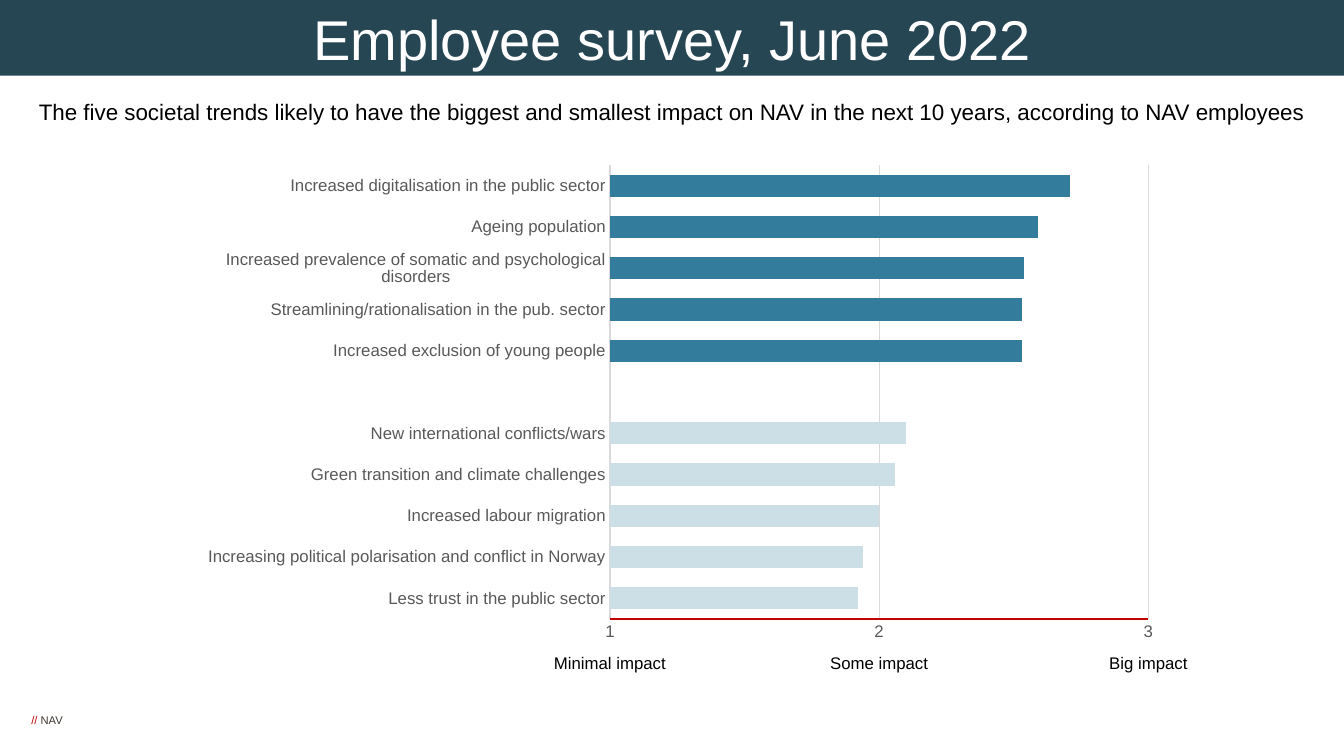
from pptx import Presentation
from pptx.chart.data import CategoryChartData
from pptx.dml.color import RGBColor
from pptx.enum.chart import XL_CHART_TYPE, XL_TICK_MARK
from pptx.enum.shapes import MSO_SHAPE
from pptx.enum.text import MSO_ANCHOR, PP_ALIGN
from pptx.oxml import parse_xml
from pptx.oxml.ns import nsdecls, qn
from pptx.util import Inches, Pt

COLORS = {
    "band": "254652", "white": "FFFFFF", "black": "000000",
    "big": "337C9B", "small": "CCDEE6", "label": "595959",
    "grid": "D9D9D9", "accent": "C30000", "footer": "3E3832",
}
FONT = "Arial"

# Trends from the bottom of the chart to the top
SMALLEST = [
    ("Less trust in the public sector", 1.92),
    ("Increasing political polarisation and conflict in Norway", 1.94),
    ("Increased labour migration", 2),
    ("Green transition and climate challenges", 2.06),
    ("New international conflicts/wars", 2.1),
]
BIGGEST = [
    ("Increased exclusion of young people", 2.53),
    ("Streamlining/rationalisation in the pub. sector", 2.53),
    ("Increased prevalence of somatic and psychological disorders", 2.54),
    ("Ageing population", 2.59),
    ("Increased digitalisation in the public sector", 2.71),
]
IMPACTS = ["Minimal impact", "Some impact", "Big impact"]
# Plot area as shares of the chart: left, top, width, height
PLOT = (0.441, 0.024, 0.534, 0.837)


def color(name):
    return RGBColor.from_string(COLORS[name])


def set_font(font, size, name):
    font.name, font.size = FONT, Pt(size)
    font.color.rgb = color(name)


def box_inches(box):
    return [Inches(length) for length in box]


def add_band(slide, box):
    band = slide.shapes.add_shape(MSO_SHAPE.RECTANGLE, *box_inches(box))
    band.shadow.inherit = False
    band.fill.solid()
    band.fill.fore_color.rgb = color("band")
    band.line.fill.background()
    band.text_frame.vertical_anchor = MSO_ANCHOR.MIDDLE
    heading = band.text_frame.paragraphs[0]
    heading.text = "Employee survey, June 2022"
    heading.alignment = PP_ALIGN.CENTER
    set_font(heading.font, 40, "white")


def fill_title(slide, box):
    title = slide.shapes.title
    title.left, title.top, title.width, title.height = box_inches(box)
    title.text_frame.vertical_anchor = MSO_ANCHOR.MIDDLE
    question = title.text_frame.paragraphs[0]
    question.text = ("The five societal trends likely to have the biggest and smallest "
                     "impact on NAV in the next 10 years, according to NAV employees")
    question.alignment = PP_ALIGN.CENTER
    question.line_spacing = 0.9
    set_font(question.font, 16, "black")


def format_axis(axis, line):
    axis.major_tick_mark = axis.minor_tick_mark = XL_TICK_MARK.NONE
    axis.format.line.color.rgb = color(line)
    axis.format.line.width = Pt(0.75)
    set_font(axis.tick_labels.font, 12, "label")


def place_plot(chart):
    plot_area = chart.plots[0]._element.getparent()
    for layout in plot_area.findall(qn("c:layout")):
        plot_area.remove(layout)
    sides = "".join(f'<c:{side} val="{share}"/>' for side, share in zip("xywh", PLOT))
    plot_area.insert(0, parse_xml(
        f'<c:layout {nsdecls("c")}><c:manualLayout><c:layoutTarget val="inner"/>'
        f'<c:xMode val="edge"/><c:yMode val="edge"/>{sides}</c:manualLayout></c:layout>'))


def add_impact_chart(slide, box):
    trends = SMALLEST + [("", None)] + BIGGEST
    survey = CategoryChartData()
    survey.categories = [trend for trend, _ in trends]
    survey.add_series("Series 1", [score for _, score in trends])
    chart = slide.shapes.add_chart(
        XL_CHART_TYPE.BAR_STACKED, *box_inches(box), survey).chart
    chart.has_legend = chart.has_title = False
    set_font(chart.font, 12, "black")
    place_plot(chart)

    # Bars
    bars = chart.plots[0]
    bars.gap_width, bars.overlap = 86, 100
    bars.vary_by_categories = False
    scores = bars.series[0]
    scores.format.fill.solid()
    scores.format.fill.fore_color.rgb = color("big")
    for index in range(len(SMALLEST)):
        fill = scores.points[index].format.fill
        fill.solid()
        fill.fore_color.rgb = color("small")

    # Axes
    format_axis(chart.category_axis, "grid")
    impact_axis = chart.value_axis
    format_axis(impact_axis, "accent")
    impact_axis.minimum_scale, impact_axis.maximum_scale = 1, 3
    impact_axis.major_unit = 1
    impact_axis.tick_labels.number_format = "0"
    impact_axis.tick_labels.number_format_is_linked = False
    impact_axis.has_major_gridlines = True
    gridline = impact_axis.major_gridlines.format.line
    gridline.color.rgb = color("grid")
    gridline.width = Pt(0.75)


def add_impact_labels(slide, chart_box, top):
    left, _, width, _ = chart_box
    label_width = 1.9
    for step, impact in enumerate(IMPACTS):
        center = left + width * (PLOT[0] + PLOT[2] * step / (len(IMPACTS) - 1))
        label = slide.shapes.add_textbox(
            *box_inches((center - label_width / 2, top, label_width, 0.3)))
        label.text_frame.word_wrap = True
        caption = label.text_frame.paragraphs[0]
        caption.text = impact
        caption.alignment = PP_ALIGN.CENTER
        set_font(caption.font, 12, "black")


def add_footer(slide, box):
    frame = slide.shapes.add_textbox(*box_inches(box)).text_frame
    frame.margin_left = Inches(0.04)
    frame.margin_top = frame.margin_right = frame.margin_bottom = 0
    for text, name in (("// ", "accent"), ("NAV", "footer")):
        run = frame.paragraphs[0].add_run()
        run.text = text
        set_font(run.font, 8, name)


def main():
    prs = Presentation()
    prs.slide_width, prs.slide_height = Inches(13.33), Inches(7.5)
    slide = prs.slides.add_slide(prs.slide_layouts[5])
    chart_box = (1.64, 1.51, 10, 5.38)
    add_footer(slide, (0.27, 7.08, 0.39, 0.13))
    fill_title(slide, (0, 0.75, 13.33, 0.75))
    add_band(slide, (0, 0, 13.33, 0.75))
    add_impact_labels(slide, chart_box, 6.43)
    add_impact_chart(slide, chart_box)
    prs.save("out.pptx")


if __name__ == "__main__":
    main()
